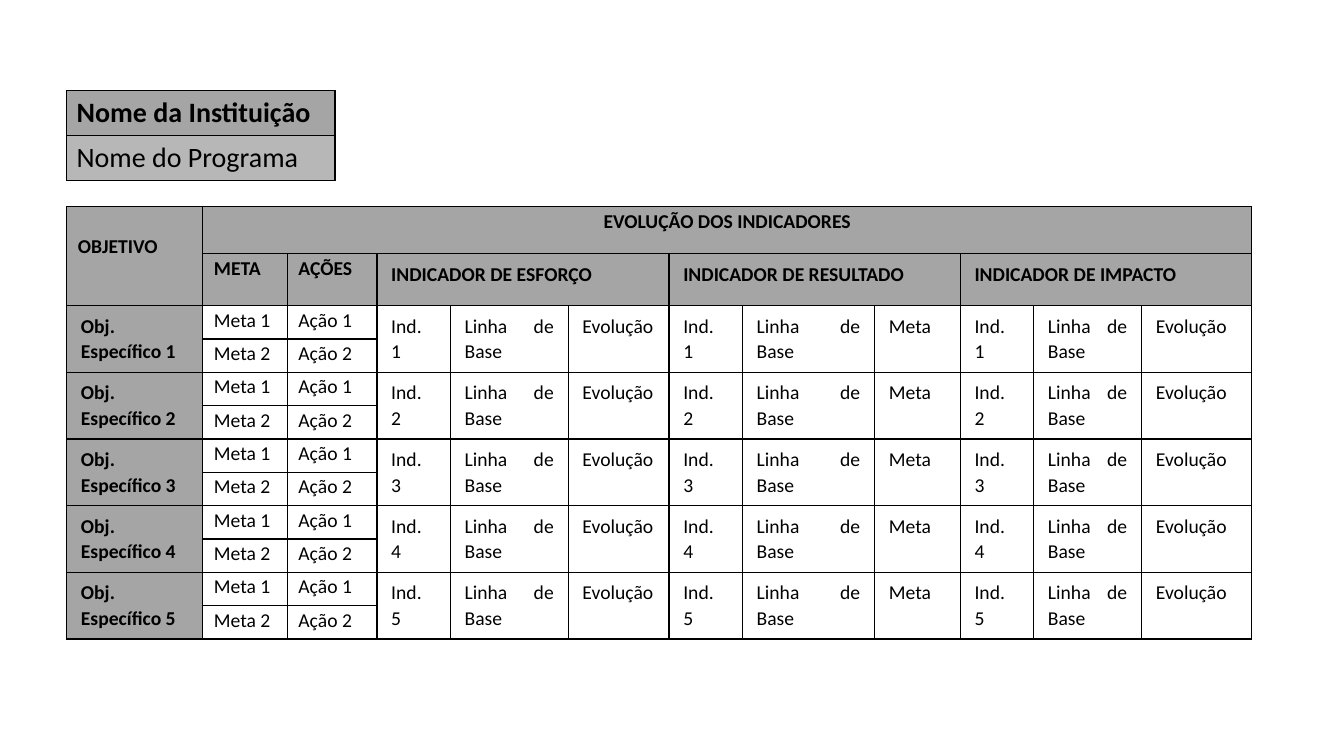
from lxml import etree
from pptx import Presentation
from pptx import util as u
from pptx.dml.color import RGBColor
from pptx.enum import text
from pptx.oxml.ns import qn

BLACK, GREY, LIGHT_GREY = "000000", "A5A5A5", "B7B7B7"
JUSTIFY, CENTER = text.PP_ALIGN.JUSTIFY, text.PP_ALIGN.CENTER

# Cell margins in cm: left, top, right, bottom
TIGHT = (0.28, 0.03, 0.28, 0)
LOOSE = (0.36, 0.18, 0.36, 0.18)
LOWERED = (0.28, 0.67, 0.28, 0)
NAME_MARGINS = (0.25, 0.13, 0.25, 0.13)

COLUMN_WIDTHS = (3.43, 2.13, 2.26, 1.85, 2.97, 2.54, 1.85, 3.33, 2.16, 1.85, 2.72, 2.78)
INDICATORS = (("ESFORÇO", "Evolução"), ("RESULTADO", "Meta"), ("IMPACTO", "Evolução"))
OBJECTIVES = 5
ACTIONS = 2


def color(hex_string):
    return RGBColor.from_string(hex_string)


def add_borders(cell):
    properties = cell._tc.get_or_add_tcPr()
    for side in ("a:lnL", "a:lnR", "a:lnT", "a:lnB"):
        line = etree.SubElement(properties, qn(side), w=str(u.Pt(1)))
        fill = etree.SubElement(line, qn("a:solidFill"))
        etree.SubElement(fill, qn("a:srgbClr"), val=BLACK)


def add_grid(page, left, top, widths, heights):
    """Add a table with black borders and no fill."""
    frame = page.shapes.add_table(
        len(heights), len(widths), u.Cm(left), u.Cm(top),
        u.Cm(sum(widths)), u.Cm(sum(heights)))
    table = frame.table
    table.first_row = table.horz_banding = False
    for column, width in zip(table.columns, widths):
        column.width = u.Cm(width)
    for row, height in zip(table.rows, heights):
        row.height = u.Cm(height)
    for cell in table.iter_cells():
        add_borders(cell)
        cell.fill.background()
    return table


def write_cell(cell, words, margins, fill=None, bold=False, size=14,
               align=JUSTIFY, spacing=1.07):
    left, top, right, bottom = margins
    cell.margin_left, cell.margin_top = u.Cm(left), u.Cm(top)
    cell.margin_right, cell.margin_bottom = u.Cm(right), u.Cm(bottom)
    if fill:
        cell.fill.solid()
        cell.fill.fore_color.rgb = color(fill)
    para = cell.text_frame.paragraphs[0]
    para.text = words
    para.alignment = align
    para.line_spacing = spacing
    para.font.name = "Calibri"
    para.font.size = u.Pt(size)
    para.font.bold = bold
    para.font.color.rgb = color(BLACK)


def merge(table, row, column, rows, columns):
    cell = table.cell(row, column)
    cell.merge(table.cell(row + rows - 1, column + columns - 1))
    return cell


def add_names(page, left, top, width, row_height):
    table = add_grid(page, left, top, [width], [row_height] * 2)
    names = (("Nome da Instituição", GREY, True), ("Nome do Programa", LIGHT_GREY, False))
    for row, (name, fill, bold) in enumerate(names):
        write_cell(table.cell(row, 0), name, NAME_MARGINS, fill, bold,
                   size=20, align=text.PP_ALIGN.LEFT, spacing=1.0)


def write_header(table):
    write_cell(merge(table, 0, 0, 2, 1), "OBJETIVO", LOWERED, GREY, True)
    write_cell(merge(table, 0, 1, 1, len(COLUMN_WIDTHS) - 1),
               "EVOLUÇÃO DOS INDICADORES", TIGHT, GREY, True, align=CENTER)
    for column, heading in enumerate(("META", "AÇÕES"), start=1):
        write_cell(table.cell(1, column), heading, TIGHT, GREY, True)
    for group, (kind, _) in enumerate(INDICATORS):
        write_cell(merge(table, 1, 3 + 3 * group, 1, 3),
                   f"INDICADOR DE {kind}", LOOSE, GREY, True)


def write_objective(table, number):
    first_row = 2 + ACTIONS * (number - 1)
    write_cell(merge(table, first_row, 0, ACTIONS, 1),
               f"Obj. Específico {number}", LOOSE, GREY, True)
    for action in range(ACTIONS):
        for column, label in enumerate(("Meta", "Ação"), start=1):
            write_cell(table.cell(first_row + action, column),
                       f"{label} {action + 1}", TIGHT)
    for group, (_, outcome) in enumerate(INDICATORS):
        labels = (f"Ind. {number}", "Linha de Base", outcome)
        for column, label in enumerate(labels, start=3 + 3 * group):
            write_cell(merge(table, first_row, column, ACTIONS, 1), label, LOOSE)


def add_indicators(page, left, top):
    heights = [1.18, 1.28] + [0.84] * (OBJECTIVES * ACTIONS)
    table = add_grid(page, left, top, COLUMN_WIDTHS, heights)
    write_header(table)
    for number in range(1, OBJECTIVES + 1):
        write_objective(table, number)


def main():
    deck = Presentation()
    deck.slide_width, deck.slide_height = u.Cm(33.87), u.Cm(19.05)
    page = deck.slides.add_slide(deck.slide_layouts[6])
    add_indicators(page, left=1.68, top=5.21)
    add_names(page, left=1.68, top=2.29, width=6.76, row_height=1.11)
    deck.save("out.pptx")


if __name__ == "__main__":
    main()
